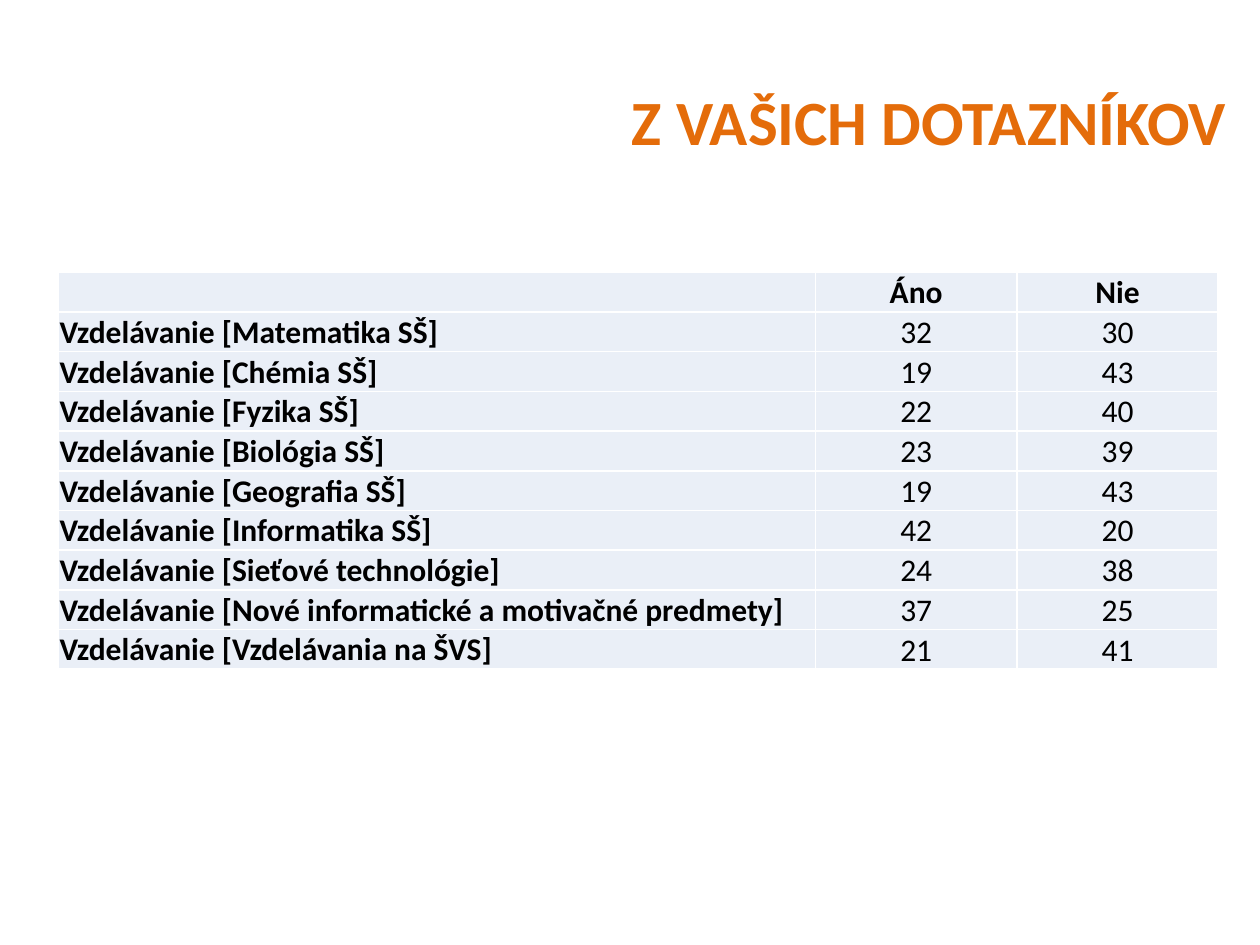
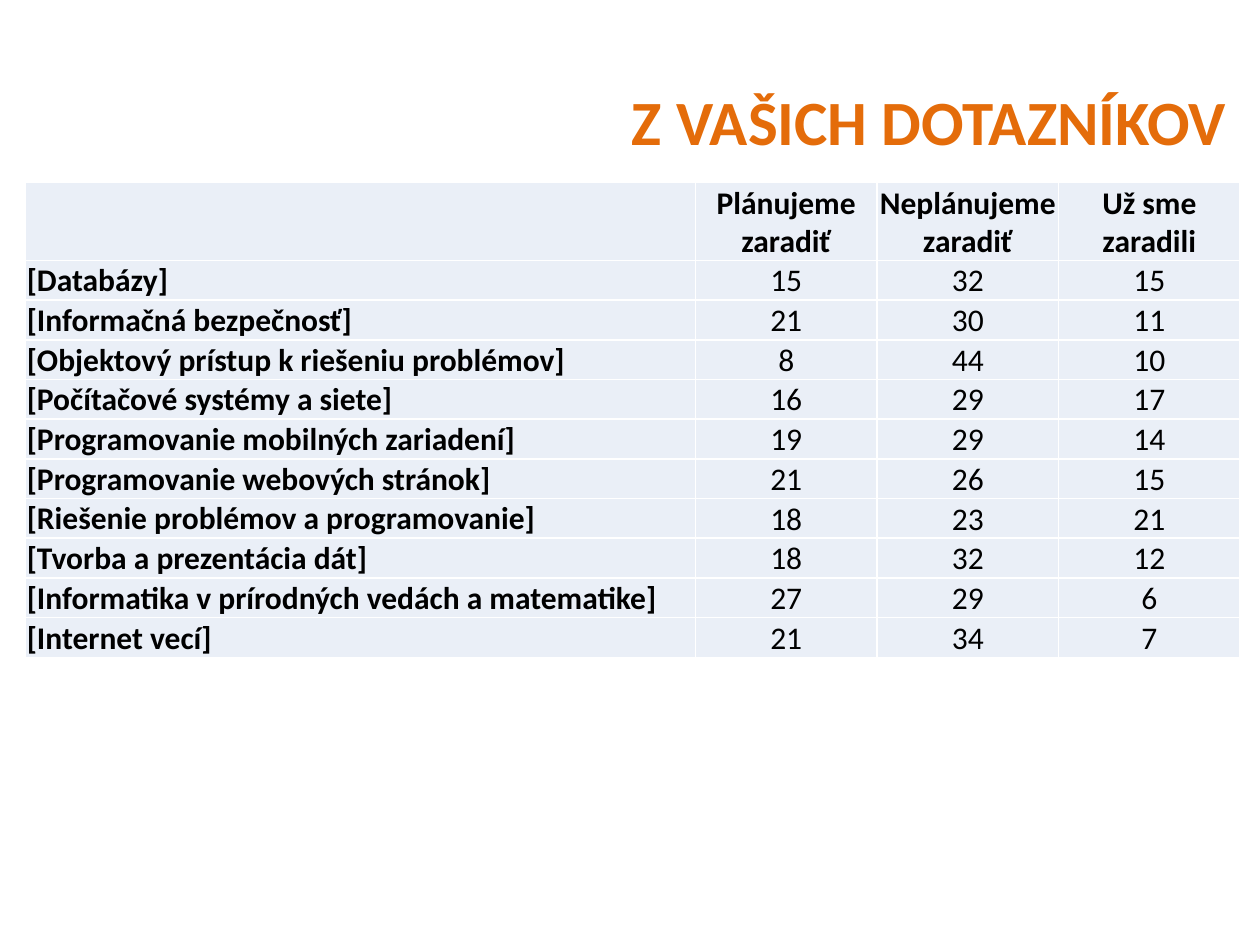
from dataclasses import dataclass

import lxml.etree
import pptx
import pptx.dml.color
import pptx.enum.text
import pptx.oxml.ns
import pptx.util

Cm = pptx.util.Cm
Align = pptx.enum.text.PP_ALIGN
Anchor = pptx.enum.text.MSO_ANCHOR

# Shared style
FONT = "Calibri"
ORANGE = "E46C0A"
BLACK = "000000"
WHITE = "FFFFFF"
PALE_BLUE = "EAEFF7"
TITLE = "Z VAŠICH DOTAZNÍKOV"
ROW_HEIGHT = 0.8
CELL_MARGIN = 0.03


@dataclass
class SurveyTable:
    left: float
    top: float
    label_width: float
    answer_width: float
    header_height: float
    answers: list[str]
    questions: list[tuple]


SUBJECTS = SurveyTable(
    1.17, 5.49, 15.27, 4.06, ROW_HEIGHT,
    ["Áno", "Nie"],
    [
        ("Vzdelávanie [Matematika SŠ]", 32, 30),
        ("Vzdelávanie [Chémia SŠ]", 19, 43),
        ("Vzdelávanie [Fyzika SŠ]", 22, 40),
        ("Vzdelávanie [Biológia SŠ]", 23, 39),
        ("Vzdelávanie [Geografia SŠ]", 19, 43),
        ("Vzdelávanie [Informatika SŠ]", 42, 20),
        ("Vzdelávanie [Sieťové technológie]", 24, 38),
        ("Vzdelávanie [Nové informatické a motivačné predmety]", 37, 25),
        ("Vzdelávanie [Vzdelávania na ŠVS]", 21, 41),
    ],
)

COURSES = SurveyTable(
    0.51, 3.68, 13.51, 3.66, 1.57,
    ["Plánujeme zaradiť", "Neplánujeme zaradiť", "Už sme zaradili"],
    [
        ("[Databázy]", 15, 32, 15),
        ("[Informačná bezpečnosť]", 21, 30, 11),
        ("[Objektový prístup k riešeniu problémov]", 8, 44, 10),
        ("[Počítačové systémy a siete]", 16, 29, 17),
        ("[Programovanie mobilných zariadení]", 19, 29, 14),
        ("[Programovanie webových stránok]", 21, 26, 15),
        ("[Riešenie problémov a programovanie]", 18, 23, 21),
        ("[Tvorba a prezentácia dát]", 18, 32, 12),
        ("[Informatika v prírodných vedách a matematike]", 27, 29, 6),
        ("[Internet vecí]", 21, 34, 7),
    ],
)


def color(value: str) -> pptx.dml.color.RGBColor:
    return pptx.dml.color.RGBColor.from_string(value)


def add_span(para, text: str, size: float, ink: str, bold: bool) -> None:
    span = para.add_run()
    span.text = text
    span.font.name = FONT
    span.font.size = pptx.util.Pt(size)
    span.font.bold = bold
    span.font.color.rgb = color(ink)


def add_title(page) -> None:
    box = page.shapes.add_textbox(Cm(8.18), Cm(1.7), Cm(16.79), Cm(1.63))
    frame = box.text_frame
    frame.word_wrap = True
    frame.vertical_anchor = Anchor.MIDDLE
    para = frame.paragraphs[0]
    para.alignment = Align.RIGHT
    para.line_spacing = 0.9
    add_span(para, TITLE, 36, ORANGE, True)


def add_borders(cell) -> None:
    properties = cell._tc.get_or_add_tcPr()
    qn = pptx.oxml.ns.qn
    for side in ("a:lnL", "a:lnR", "a:lnT", "a:lnB"):
        line = lxml.etree.SubElement(properties, qn(side), w=str(pptx.util.Pt(1)))
        fill = lxml.etree.SubElement(line, qn("a:solidFill"))
        lxml.etree.SubElement(fill, qn("a:srgbClr"), val=WHITE)


def fill_cell(cell, text: str, is_label: bool, bold: bool) -> None:
    add_borders(cell)
    cell.fill.solid()
    cell.fill.fore_color.rgb = color(PALE_BLUE)
    cell.margin_left = cell.margin_right = cell.margin_top = Cm(CELL_MARGIN)
    cell.margin_bottom = 0
    cell.vertical_anchor = Anchor.BOTTOM if is_label else Anchor.MIDDLE
    para = cell.text_frame.paragraphs[0]
    para.alignment = Align.LEFT if is_label else Align.CENTER
    if text:
        add_span(para, text, 18, BLACK, bold)


def add_survey_table(page, survey: SurveyTable) -> None:
    rows = [("", *survey.answers), *survey.questions]
    widths = [survey.label_width] + [survey.answer_width] * len(survey.answers)
    heights = [survey.header_height] + [ROW_HEIGHT] * len(survey.questions)
    table = page.shapes.add_table(
        len(rows), len(widths), Cm(survey.left), Cm(survey.top),
        Cm(sum(widths)), Cm(sum(heights)),
    ).table
    table.first_row = False
    table.horz_banding = False
    for column, width in zip(table.columns, widths):
        column.width = Cm(width)
    for row, height in zip(table.rows, heights):
        row.height = Cm(height)
    for r, values in enumerate(rows):
        for c, value in enumerate(values):
            fill_cell(table.cell(r, c), str(value), c == 0, r == 0 or c == 0)


def main() -> None:
    deck = pptx.Presentation()
    deck.slide_width = Cm(25.4)
    deck.slide_height = Cm(19.05)
    # One page for each survey
    for survey in (SUBJECTS, COURSES):
        page = deck.slides.add_slide(deck.slide_layouts[6])
        add_title(page)
        add_survey_table(page, survey)
    deck.save("out.pptx")


if __name__ == "__main__":
    main()
